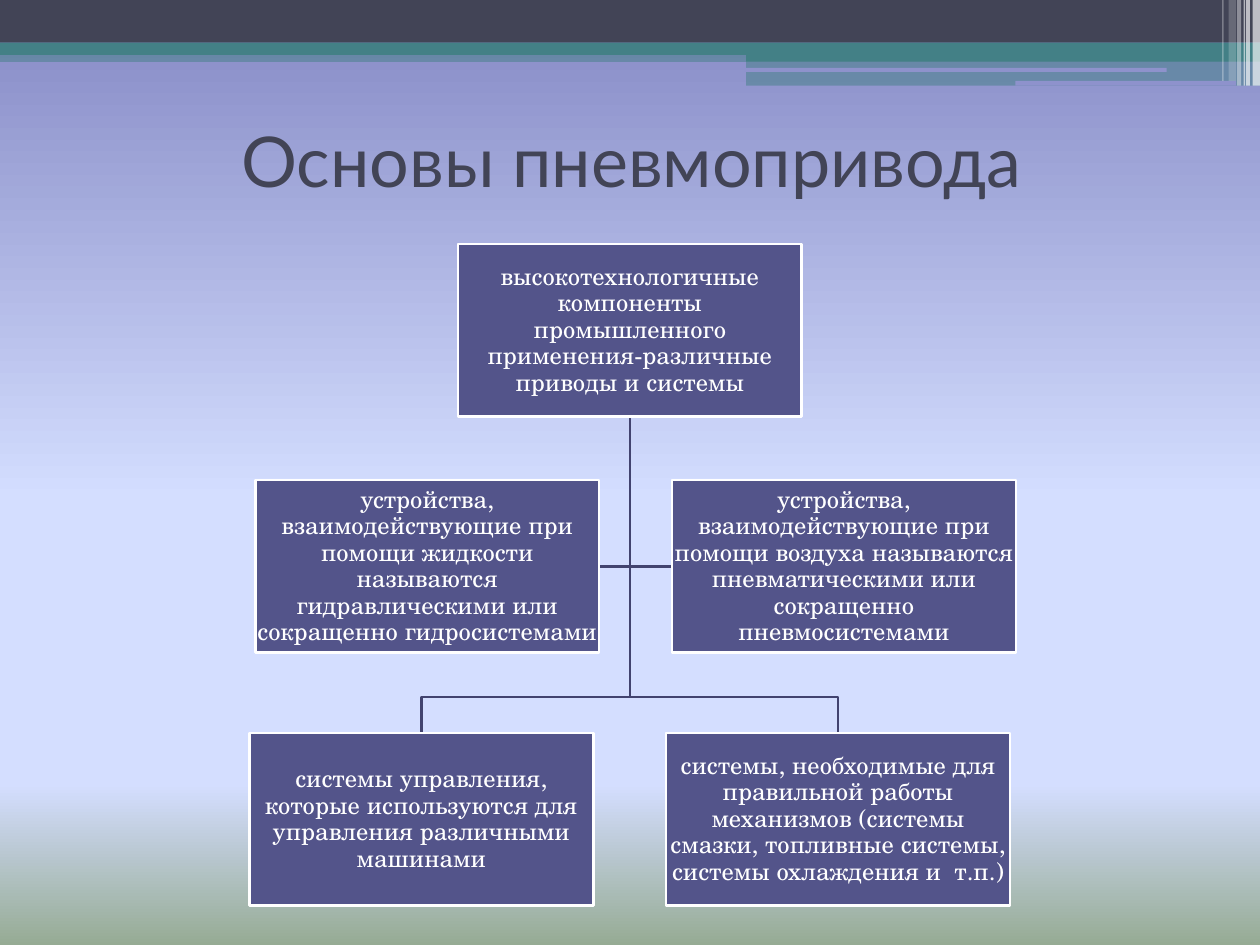
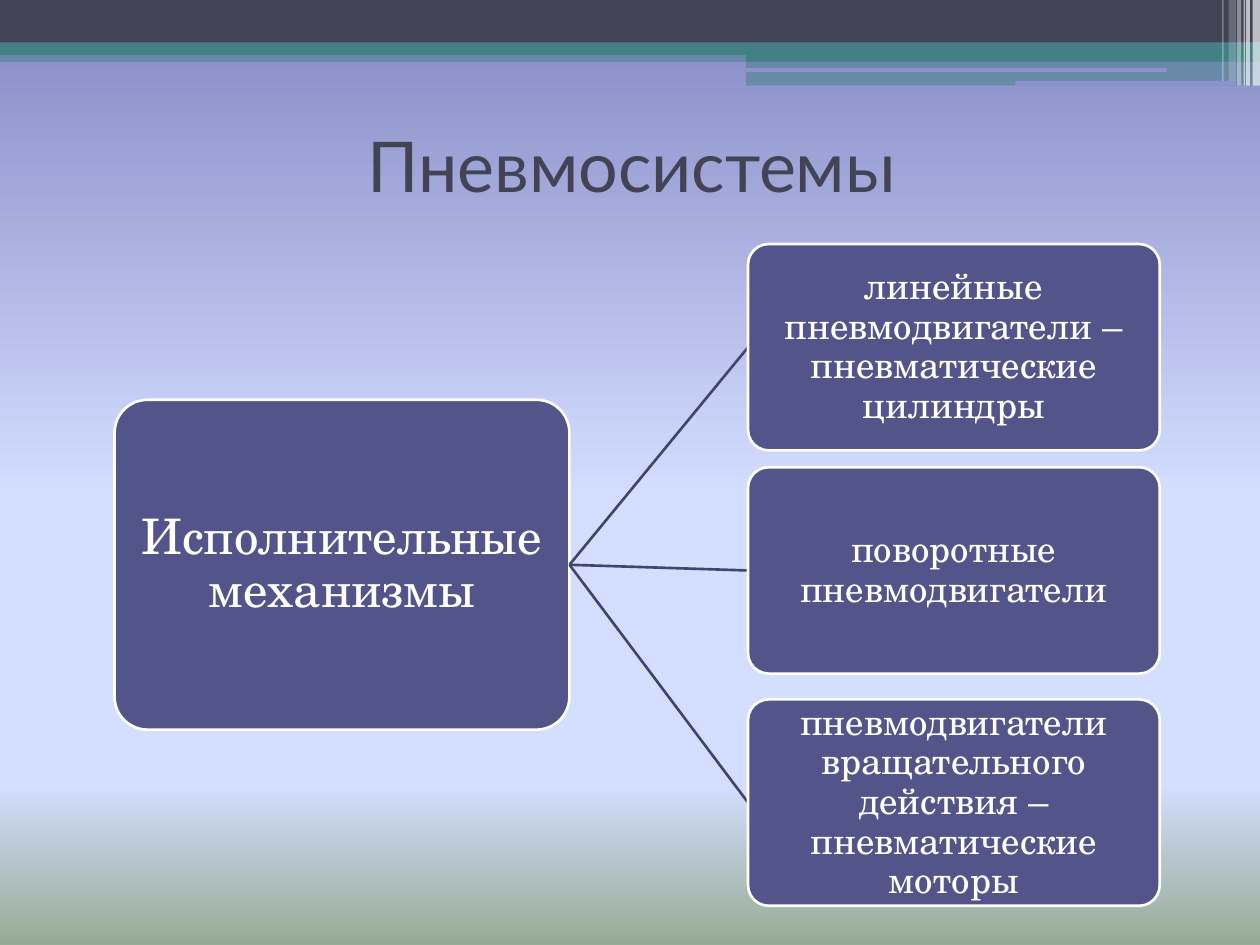
from lxml import etree
from pptx import Presentation
from pptx import util as u
from pptx.dml.color import RGBColor
from pptx.enum import shapes, text
from pptx.oxml.ns import qn

SLIDE_W, SLIDE_H = 25.4, 19.05
DARK, TEAL, NODE, LINK, WHITE, STRIP = "424456", "438086", "53548A", "42436F", "FFFFFF", "8E92CC"
BACKDROP = ((0, "8488C4"), (53, "D4DEFF"), (83, "D4DEFF"), (100, "96AB94"))
TITLE_FONT, BODY_FONT = "Lato", "TeX Gyre Schola"
RECT = shapes.MSO_SHAPE.RECTANGLE
ROUND = shapes.MSO_SHAPE.ROUNDED_RECTANGLE
LINE_WIDTH = u.Pt(1.5)
NODE_INSET = u.Cm(0.03)

BANDS = (
    (0, 1.02, SLIDE_W, 0.23, TEAL, 50),
    (0, 0, SLIDE_W, 0.86, DARK, 100),
    (0, 0.86, SLIDE_W, 0.25, TEAL, 100),
    (15.04, 0.99, 10.36, 0.25, TEAL, 100),
    (15.04, 1.22, 10.36, 0.51, TEAL, 50),
    (15.01, 1.37, 8.51, 0.08, STRIP, 100),
    (20.47, 1.63, 4.45, 0.1, STRIP, 100),
    (25.25, 0, 0.15, 1.73, WHITE, 65),
    (25.12, 0, 0.08, 1.73, WHITE, 65),
    (25.07, 0, 0.03, 1.73, WHITE, 60),
    (24.94, 0, 0.08, 1.73, WHITE, 40),
    (24.77, 0, 0.15, 1.63, WHITE, 20),
    (24.64, 0, 0.03, 1.63, WHITE, 30),
)


def colour(hex_value):
    return RGBColor.from_string(hex_value)


def cm(*lengths):
    return [u.Cm(length) for length in lengths]


def apply(target, values):
    for name, value in values.items():
        setattr(target, name, value)


def paint(shape, fill, alpha=100):
    shape.shadow.inherit = False
    shape.fill.solid()
    shape.fill.fore_color.rgb = colour(fill)
    if alpha < 100:
        tint = shape._element.spPr.find(".//" + qn("a:srgbClr"))
        etree.SubElement(tint, qn("a:alpha"), val=str(alpha * 1000))


def outline(shape, ink):
    shape.line.color.rgb = colour(ink)
    shape.line.width = LINE_WIDTH


def write(shape, words, font, size, ink, spacing, inset):
    frame = shape.text_frame
    apply(frame, {"word_wrap": True, "vertical_anchor": text.MSO_ANCHOR.MIDDLE,
                  "text": words, **inset})
    paragraph = frame.paragraphs[0]
    apply(paragraph, {"alignment": text.PP_ALIGN.CENTER, "line_spacing": spacing})
    apply(paragraph.runs[0].font, {"name": font, "size": u.Pt(size)})
    paragraph.runs[0].font.color.rgb = colour(ink)


def add_backdrop(slide):
    fill = slide.background.fill
    fill.gradient()
    fill.gradient_angle = 270
    stops = slide._element.find(".//" + qn("a:gsLst"))
    for stop in list(stops):
        stops.remove(stop)
    for position, hex_value in BACKDROP:
        stop = etree.SubElement(stops, qn("a:gs"), pos=str(position * 1000))
        etree.SubElement(stop, qn("a:srgbClr"), val=hex_value)


def add_band(slide, left, top, width, height, fill, alpha):
    band = slide.shapes.add_shape(RECT, *cm(left, top, width, height))
    paint(band, fill, alpha)
    band.line.fill.background()


def add_title(slide, words, height):
    title = slide.shapes.add_textbox(*cm(1.3, 1.93, 22.86, height))
    write(title, words, TITLE_FONT, 40, DARK, 1.0, {})


def add_node(slide, kind, left, top, width, height, words, size):
    node = slide.shapes.add_shape(kind, *cm(left, top, width, height))
    if kind == ROUND:
        node.adjustments[0] = 0.1
    paint(node, NODE)
    outline(node, WHITE)
    sides = ("left", "right", "top", "bottom")
    write(node, words, BODY_FONT, size, WHITE, 0.9,
          {f"margin_{side}": NODE_INSET for side in sides})


def add_branch(slide, *points):
    start, *rest = [cm(*point) for point in points]
    builder = slide.shapes.build_freeform(*start)
    builder.add_line_segments(rest, close=False)
    branch = builder.convert_to_shape()
    branch.shadow.inherit = False
    branch.fill.background()
    outline(branch, LINK)


def add_link(slide, x1, y1, x2, y2):
    link = slide.shapes.add_connector(shapes.MSO_CONNECTOR.STRAIGHT, *cm(x1, y1, x2, y2))
    outline(link, LINK)
    etree.SubElement(link._element.spPr, qn("a:effectLst"))


def add_themed_slide(deck, title, title_height):
    slide = deck.slides.add_slide(deck.slide_layouts[6])
    add_backdrop(slide)
    for band in BANDS:
        add_band(slide, *band)
    add_title(slide, title, title_height)
    return slide


def build_basics(deck):
    slide = add_themed_slide(deck, "Основы пневмопривода", 2.59)
    width, height, pitch = 6.93, 3.48, 8.4
    trunk = SLIDE_W / 2
    root_top, devices_top, systems_top = 4.92, 9.68, 14.78
    devices_left, systems_left = 5.15, 5.03
    fork = 14.05
    root_bottom = root_top + height
    devices_middle = devices_top + height / 2

    for edge in (devices_left + pitch, devices_left + width):
        add_branch(slide, (trunk, root_bottom), (trunk, devices_middle), (edge, devices_middle))
    for column in (1, 0):
        centre = systems_left + column * pitch + width / 2
        add_branch(slide, (trunk, root_bottom), (trunk, fork), (centre, fork),
                   (centre, systems_top))

    add_node(slide, RECT, trunk - width / 2, root_top, width, height,
             "высокотехнологичные компоненты промышленного применения-различные "
             "приводы и системы", 14)
    rows = (
        (systems_left, systems_top, (
            "системы управления, которые используются для управления различными машинами",
            "системы, необходимые для правильной работы механизмов (системы смазки, "
            "топливные системы, системы охлаждения и  т.п.)")),
        (devices_left, devices_top, (
            "устройства, взаимодействующие при помощи жидкости называются "
            "гидравлическими или сокращенно гидросистемами",
            "устройства, взаимодействующие при помощи воздуха называются "
            "пневматическими или сокращенно пневмосистемами")),
    )
    for left, top, row in rows:
        for column, words in enumerate(row):
            add_node(slide, RECT, left + column * pitch, top, width, height, words, 14)


def build_pneumatics(deck):
    slide = add_themed_slide(deck, "Пневмосистемы", 2.79)
    root_left, root_top, root_width, root_height = 2.31, 8.06, 9.17, 6.65
    motor_left, motor_width, motor_height = 15.08, 8.3, 4.16
    motors = (
        (4.92, "линейные пневмодвигатели – пневматические цилиндры"),
        (9.42, "поворотные пневмодвигатели"),
        (14.1, "пневмодвигатели вращательного действия – пневматические моторы"),
    )
    add_node(slide, ROUND, root_left, root_top, root_width, root_height,
             "Исполнительные механизмы", 28)
    for top, words in motors:
        add_link(slide, root_left + root_width, root_top + root_height / 2,
                 motor_left, top + motor_height / 2)
        add_node(slide, ROUND, motor_left, top, motor_width, motor_height, words, 21)


def main():
    deck = Presentation()
    apply(deck, {"slide_width": u.Cm(SLIDE_W), "slide_height": u.Cm(SLIDE_H)})
    build_basics(deck)
    build_pneumatics(deck)
    deck.save("out.pptx")


if __name__ == "__main__":
    main()
